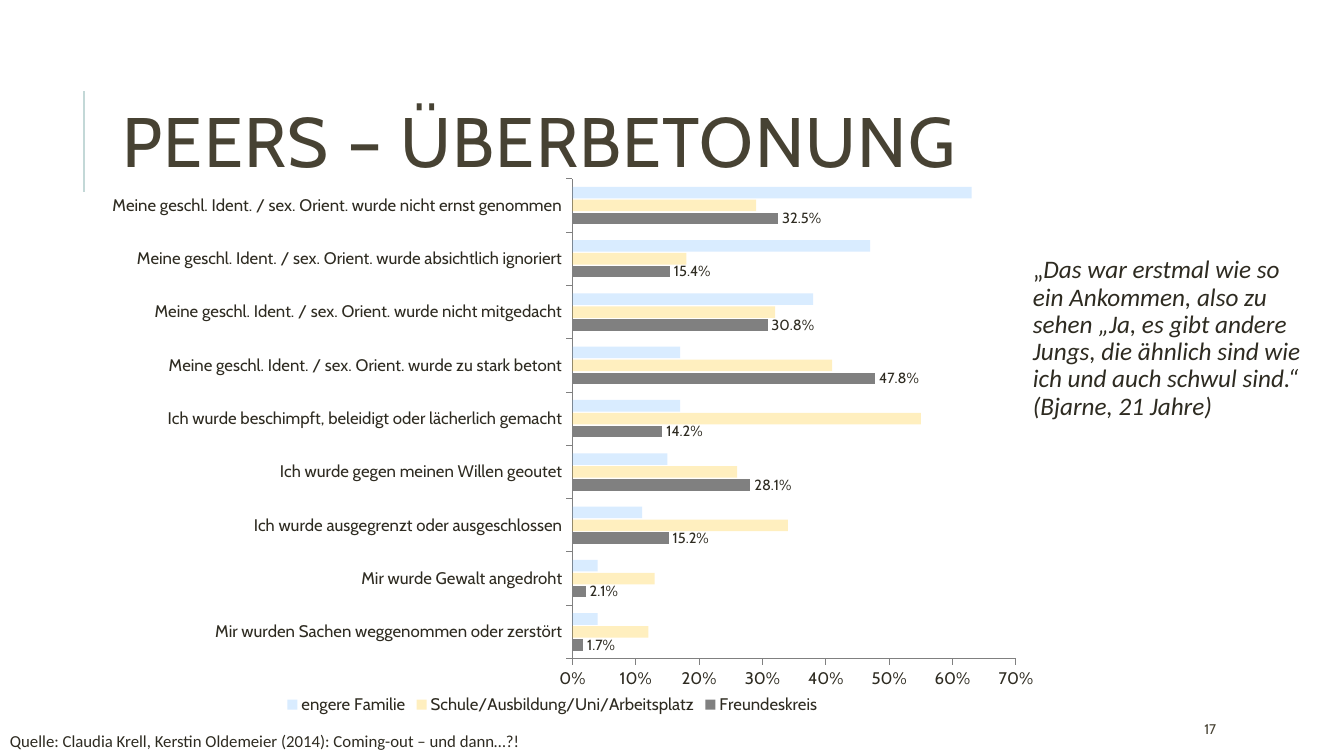
from lxml import etree
from pptx import Presentation
from pptx.chart.data import CategoryChartData
from pptx.dml.color import RGBColor
from pptx.enum.chart import XL_CHART_TYPE, XL_LABEL_POSITION, XL_LEGEND_POSITION, XL_TICK_MARK
from pptx.enum.shapes import MSO_CONNECTOR
from pptx.enum.text import MSO_ANCHOR
from pptx.oxml import parse_xml
from pptx.oxml.ns import nsdecls, qn
from pptx.util import Cm, Pt

BAR_CLUSTERED = XL_CHART_TYPE.BAR_CLUSTERED
OUTSIDE_END = XL_LABEL_POSITION.OUTSIDE_END
LEGEND_BOTTOM = XL_LEGEND_POSITION.BOTTOM
TICK_OUTSIDE, TICK_NONE = XL_TICK_MARK.OUTSIDE, XL_TICK_MARK.NONE
STRAIGHT = MSO_CONNECTOR.STRAIGHT
TOP, MIDDLE = MSO_ANCHOR.TOP, MSO_ANCHOR.MIDDLE

TITLE_BROWN = RGBColor(0x47, 0x42, 0x33)
TEXT_BROWN = RGBColor(0x2E, 0x2B, 0x21)
RULE_TEAL = RGBColor(0xC3, 0xD8, 0xD7)
GREY = RGBColor(0x80, 0x80, 0x80)
YELLOW = RGBColor(0xFF, 0xC0, 0x00)
BLUE = RGBColor(0x6A, 0xB4, 0xFF)

HEADING_FONT, BODY_FONT = "Cabin", "Calibri"

# Listed from the bottom of the chart to the top
EXPERIENCES = [
    "Mir wurden Sachen weggenommen oder zerstört",
    "Mir wurde Gewalt angedroht",
    "Ich wurde ausgegrenzt oder ausgeschlossen",
    "Ich wurde gegen meinen Willen geoutet",
    "Ich wurde beschimpft, beleidigt oder lächerlich gemacht",
    "Meine geschl. Ident. / sex. Orient. wurde zu stark betont",
    "Meine geschl. Ident. / sex. Orient. wurde nicht mitgedacht",
    "Meine geschl. Ident. / sex. Orient. wurde absichtlich ignoriert",
    "Meine geschl. Ident. / sex. Orient. wurde nicht ernst genommen",
]
# Name, values, colour, opacity in percent
GROUPS = [
    ("Freundeskreis",
     [0.017, 0.021, 0.152, 0.281, 0.142, 0.478, 0.308, 0.154, 0.325], GREY, 100),
    ("Schule/Ausbildung/Uni/Arbeitsplatz",
     [0.12, 0.13, 0.34, 0.26, 0.55, 0.41, 0.32, 0.18, 0.29], YELLOW, 25),
    ("engere Familie",
     [0.04, 0.04, 0.11, 0.15, 0.17, 0.17, 0.38, 0.47, 0.63], BLUE, 25),
]


def set_font(font, name, size, color):
    font.name = name
    font.size = Pt(size)
    font.color.rgb = color


def add_text(slide, box, runs, font, size, color, anchor=TOP):
    """Place one paragraph of (text, italic) runs; return its frame and paragraph."""
    frame = slide.shapes.add_textbox(*box).text_frame
    frame.word_wrap = True
    frame.vertical_anchor = anchor
    paragraph = frame.paragraphs[0]
    for text, italic in runs:
        run = paragraph.add_run()
        run.text = text
        set_font(run.font, font, size, color)
        run.font.italic = italic
    return frame, paragraph


def add_title(slide, left, top, width, height):
    # Rule to the left of the heading
    rule_x, rule_top = left - Cm(0.73), top + Cm(0.66)
    rule = slide.shapes.add_connector(
        STRAIGHT, rule_x, rule_top + Cm(2.54), rule_x, rule_top)
    rule.line.color.rgb = RULE_TEAL
    rule.line.width = Pt(1.5)
    etree.SubElement(rule._element.spPr, qn("a:effectLst"))

    # Heading
    _, heading = add_text(slide, (left, top, width, height),
                          [("PEERS – ÜBERBETONUNG", False)],
                          HEADING_FONT, 50, TITLE_BROWN, MIDDLE)
    heading.line_spacing = 0.8
    heading.runs[0].font._element.set("spc", "100")


def style_axis(axis, size):
    axis.has_major_gridlines = False
    axis.major_tick_mark = TICK_OUTSIDE
    axis.minor_tick_mark = TICK_NONE
    axis.format.line.color.rgb = GREY
    axis.format.line.width = Pt(0.75)
    set_font(axis.tick_labels.font, HEADING_FONT, size, TEXT_BROWN)


def add_experience_chart(slide, left, top, width, height):
    data = CategoryChartData(number_format="0%")
    data.categories = EXPERIENCES
    for name, values, _, _ in GROUPS:
        data.add_series(name, values)
    chart = slide.shapes.add_chart(BAR_CLUSTERED, left, top, width, height, data).chart
    chart.has_title = False
    set_font(chart.font, BODY_FONT, 13, TEXT_BROWN)

    # Bars
    plot = chart.plots[0]
    plot.gap_width, plot.overlap = 138, -12
    plot.vary_by_categories = False
    for series, (_, _, color, opacity) in zip(plot.series, GROUPS):
        series.invert_if_negative = False
        fill = series.format.fill
        fill.solid()
        fill.fore_color.rgb = color
        if opacity < 100:
            tint = series._element.find(".//" + qn("a:srgbClr"))
            etree.SubElement(tint, qn("a:alpha"), val=str(opacity * 1000))

    # Values of the circle of friends
    labels = plot.series[0].data_labels
    labels.show_value = True
    labels.number_format = "###0.0%"
    labels.number_format_is_linked = False
    labels.position = OUTSIDE_END
    set_font(labels.font, HEADING_FONT, 10.5, TEXT_BROWN)

    # Axes and legend
    style_axis(chart.category_axis, 12)
    percent_axis = chart.value_axis
    style_axis(percent_axis, 12)
    percent_axis.minimum_scale, percent_axis.maximum_scale = 0, 0.7
    percent_axis.major_unit = 0.1
    percent_axis.tick_labels.number_format = "0%"
    percent_axis.tick_labels.number_format_is_linked = False
    chart.has_legend = True
    chart.legend.position = LEGEND_BOTTOM
    chart.legend.include_in_layout = False
    set_font(chart.legend.font, HEADING_FONT, 12, TEXT_BROWN)

    # Fixed plot area, as shares of the chart
    plot_area = chart._chartSpace.chart.plotArea
    for automatic in plot_area.findall(qn("c:layout")):
        plot_area.remove(automatic)
    shares = "".join(f'<c:{key} val="{share}"/>' for key, share in
                     (("x", 0.52), ("y", 0.01), ("w", 0.44), ("h", 0.88)))
    plot_area.insert(0, parse_xml(
        f'<c:layout {nsdecls("c")}><c:manualLayout><c:layoutTarget val="inner"/>'
        f'<c:xMode val="edge"/><c:yMode val="edge"/>{shares}'
        '</c:manualLayout></c:layout>'))


def add_quote(slide, left, top, width, height):
    runs = [("„", False),
            ("Das war erstmal wie so ein Ankommen, also zu sehen „Ja, es gibt andere "
             "Jungs, die ähnlich sind wie ich und auch schwul sind.“ "
             "(Bjarne, 21 Jahre)", True)]
    frame, quote = add_text(slide, (left, top, width, height), runs,
                            BODY_FONT, 18, TEXT_BROWN)
    frame.margin_left = Cm(0.38)
    frame.margin_right = frame.margin_top = frame.margin_bottom = Cm(0.13)
    quote.line_spacing = 0.9


def add_footer(slide, left, top, width, height):
    # Source, then page number
    add_text(slide, (left, top + Cm(0.3), Cm(19.33), height),
             [("Quelle: Claudia Krell, Kerstin Oldemeier (2014): "
               "Coming-out – und dann…?!", False)], BODY_FONT, 12, TEXT_BROWN)
    number_width = Cm(2.69)
    add_text(slide, (left + width - number_width, top, number_width, height),
             [("17", False)], HEADING_FONT, 10, TITLE_BROWN, MIDDLE)


def main():
    prs = Presentation()
    prs.slide_width, prs.slide_height = Cm(33.87), Cm(19.05)
    slide = prs.slides.add_slide(prs.slide_layouts[6])
    add_title(slide, Cm(2.84), Cm(1.63), Cm(27), Cm(4.17))
    add_experience_chart(slide, Cm(1.22), Cm(4.37), Cm(25.4), Cm(13.74))
    add_quote(slide, Cm(25.65), Cm(6.35), Cm(7.42), Cm(11.18))
    add_footer(slide, Cm(0), Cm(17.98), Cm(32.79), Cm(0.76))
    prs.save("out.pptx")


if __name__ == "__main__":
    main()
